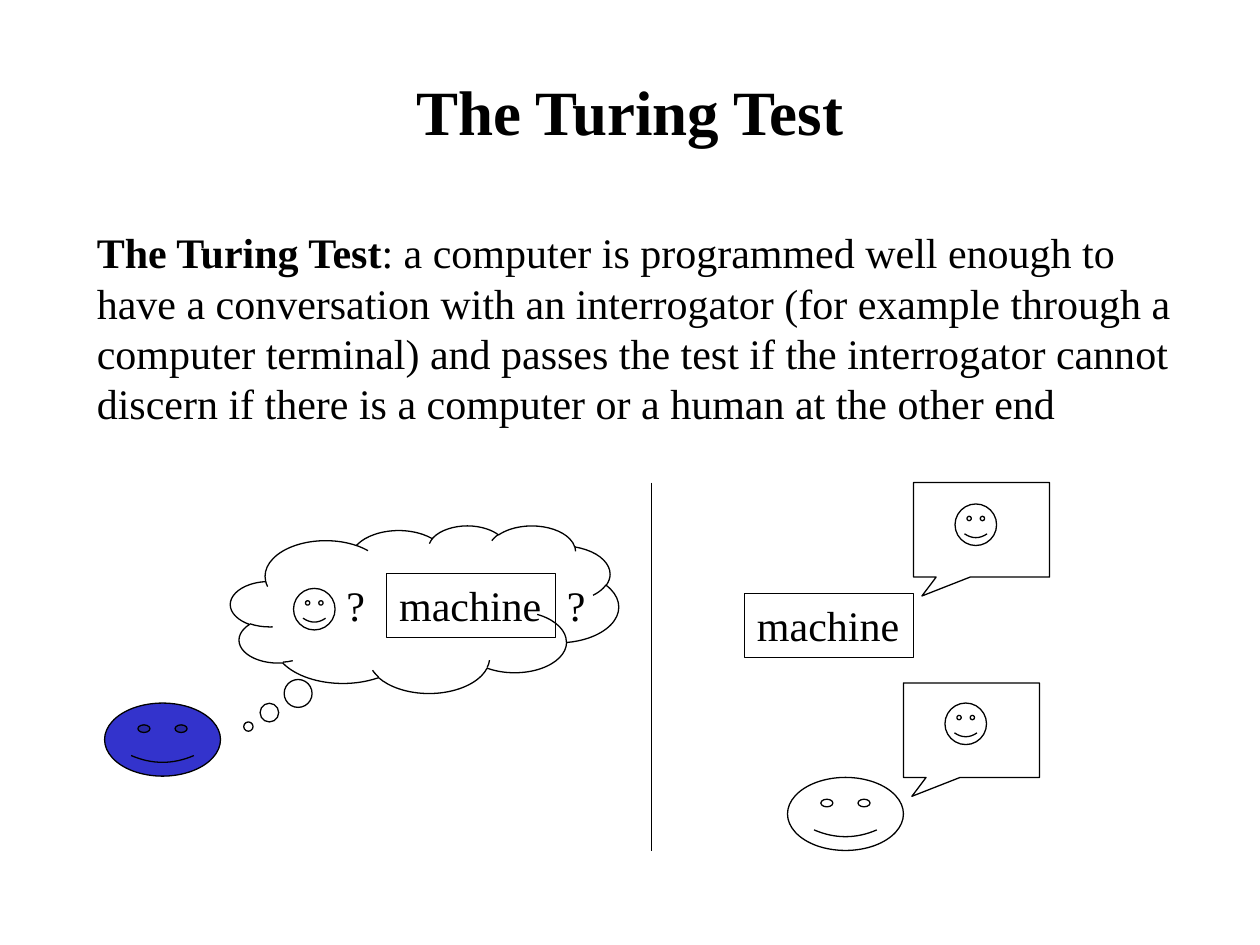
import pptx
import pptx.util
import pptx.dml.color
import pptx.enum.shapes
import pptx.enum.text
import pptx.oxml.ns
import lxml.etree

Inches = pptx.util.Inches
Pt = pptx.util.Pt
KIND = pptx.enum.shapes.MSO_SHAPE
ALIGN = pptx.enum.text.PP_ALIGN
ANCHOR = pptx.enum.text.MSO_ANCHOR


def color(hue):
    return pptx.dml.color.RGBColor.from_string(hue)


def write(frame, text, size=24, bold=False, align=ALIGN.LEFT, anchor=ANCHOR.TOP, wrap=False):
    frame.word_wrap = wrap
    frame.vertical_anchor = anchor
    par = frame.paragraphs[0]
    par.alignment = align
    run = par.add_run()
    run.text = text
    run.font.name = "Times New Roman"
    run.font.size = Pt(size)
    run.font.bold = bold
    run.font.color.rgb = color("000000")


deck = pptx.Presentation()
deck.slide_width = Inches(10)
deck.slide_height = Inches(7.5)
slide = deck.slides.add_slide(deck.slide_layouts[5])

title = slide.shapes.title
title.left, title.top = Inches(0.75), Inches(0.25)
title.width, title.height = Inches(8.5), Inches(1.25)
write(title.text_frame, "The Turing Test", size=36, bold=True,
      align=ALIGN.CENTER, anchor=ANCHOR.MIDDLE, wrap=True)

body = slide.shapes.add_textbox(Inches(0.67), Inches(1.75), Inches(8.85), Inches(1.7))
write(body.text_frame, "The Turing Test", bold=True, wrap=True)
write(body.text_frame, ": a computer is programmed well enough to have a conversation "
      "with an interrogator (for example through a computer terminal) and passes the "
      "test if the interrogator cannot discern if there is a computer or a human at "
      "the other end", wrap=True)

left = slide.shapes.add_group_shape()

wall = slide.shapes.add_connector(pptx.enum.shapes.MSO_CONNECTOR.STRAIGHT,
                                  Inches(5.17), Inches(3.83), Inches(5.17), Inches(6.75))
wall.line.color.rgb = color("000000")
wall.line.width = Pt(0.75)
props = wall._element.spPr
lxml.etree.SubElement(props, pptx.oxml.ns.qn("a:effectLst"))

right = slide.shapes.add_group_shape()

face = (KIND.SMILEY_FACE, 0.92, 0.58, [0.047])
small = (KIND.SMILEY_FACE, 0.33, 0.33, [0.047])
cloud = (KIND.CLOUD_CALLOUT, 3.08, 1.33, [-0.454, 0.701])
speech = (KIND.RECTANGULAR_CALLOUT, 1.08, 0.75, [-0.438, 0.7])
box = (KIND.RECTANGLE, 1.34, 0.51, [])

parts = [
    (left, face, 0.83, 5.58, "3333CC", ""),
    (left, cloud, 1.83, 4.17, "", ""),
    (left, small, 2.33, 4.67, "", ""),
    (left, box, 3.07, 4.55, "", "machine"),
    (right, box, 5.91, 4.71, "", "machine"),
    (right, speech, 7.25, 3.83, "", ""),
    (right, small, 7.58, 4, "", ""),
    (right, face, 6.25, 6.17, "", ""),
    (right, speech, 7.17, 5.42, "", ""),
    (right, small, 7.5, 5.58, "", ""),
]
for group, (kind, wide, high, bends), x, y, fill, text in parts:
    shape = group.shapes.add_shape(kind, Inches(x), Inches(y), Inches(wide), Inches(high))
    shape.shadow.inherit = False
    for i, bend in enumerate(bends):
        shape.adjustments[i] = bend
    if fill:
        shape.fill.solid()
        shape.fill.fore_color.rgb = color(fill)
    else:
        shape.fill.background()
    shape.line.color.rgb = color("000000")
    shape.line.width = Pt(0.75)
    if text:
        write(shape.text_frame, text)

for x in (2.65, 4.4):
    mark = left.shapes.add_textbox(Inches(x), Inches(4.55), Inches(0.35), Inches(0.5))
    write(mark.text_frame, "?")

deck.save("out.pptx")
